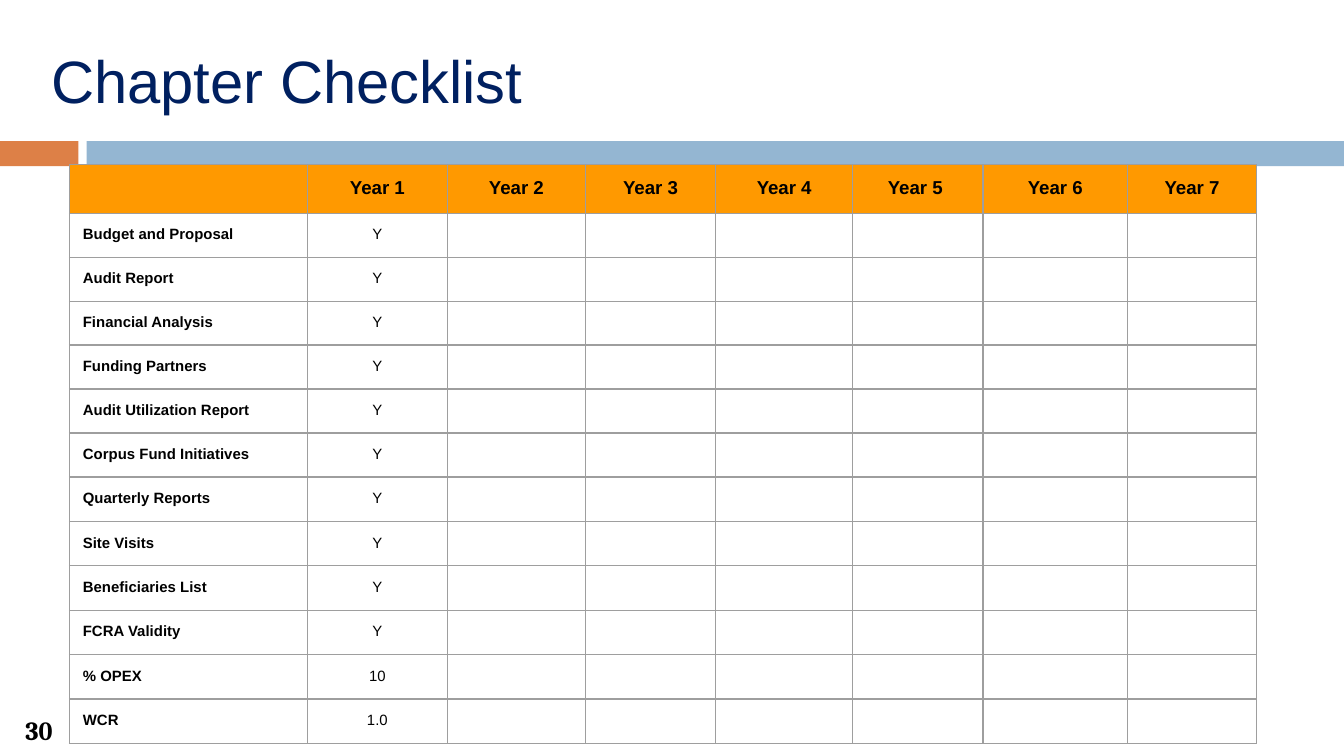
from pptx import Presentation
from pptx.dml.color import RGBColor
from pptx.enum.shapes import MSO_SHAPE as Shape
from pptx.enum.text import MSO_ANCHOR as Anchor, PP_ALIGN as Align
from pptx.oxml import parse_xml
from pptx.oxml.ns import nsdecls
from pptx.util import Pt

NAVY = RGBColor(0x00, 0x20, 0x60)
RUST = RGBColor(0xDD, 0x80, 0x47)
BLUE = RGBColor(0x94, 0xB6, 0xD2)
AMBER = RGBColor(0xFF, 0x99, 0x00)
GRAY = RGBColor(0x9E, 0x9E, 0x9E)
BLACK = RGBColor(0x00, 0x00, 0x00)

TASKS = [
    "Budget and Proposal", "Audit Report", "Financial Analysis",
    "Funding Partners", "Audit Utilization Report",
    "Corpus Fund Initiatives", "Quarterly Reports", "Site Visits",
    "Beneficiaries List", "FCRA Validity", "% OPEX", "WCR",
]
MARKS = ["Y"] * 10 + ["10", "1.0"]
HEAD = ["", "Year 1", "Year 2", "Year 3", "Year 4", "Year 5 ", "Year 6", "Year 7"]
COLS = [127.5, 75, 74, 69.75, 73.5, 69.75, 77.5, 69]
ROWS = [25.2] + [23.4] * 6 + [23.8] * 6


def style(para, size, bold=False, color=BLACK, name="Arial", align=Align.LEFT):
    para.alignment = align
    font = para.font
    font.name, font.size, font.bold = name, Pt(size), bold
    font.color.rgb = color


def add_bar(slide, left, width, color):
    bar = slide.shapes.add_shape(
        Shape.RECTANGLE, Pt(left), Pt(75.6), Pt(width), Pt(13.4))
    bar.shadow.inherit = False
    bar.fill.solid()
    bar.fill.fore_color.rgb = color
    bar.line.fill.background()


def set_title(slide, text):
    title = slide.shapes.title
    title.left, title.top = Pt(20.2), Pt(13.7)
    title.width, title.height = Pt(670.3), Pt(58.3)
    title.text = text
    title.text_frame.vertical_anchor = Anchor.MIDDLE
    style(title.text_frame.paragraphs[0], 32, color=NAVY)


def add_page(slide, text):
    box = slide.shapes.add_textbox(Pt(0), Pt(383.8), Pt(41.8), Pt(14.4))
    frame = box.text_frame
    frame.word_wrap = True
    frame.vertical_anchor = Anchor.MIDDLE
    frame.text = text
    style(frame.paragraphs[0], 14, True, name="Cambria", align=Align.CENTER)


def set_edges(cell):
    props = cell._tc.get_or_add_tcPr()
    for i, tag in enumerate(("lnL", "lnR", "lnT", "lnB")):
        props.insert(i, parse_xml(
            f'<a:{tag} {nsdecls("a")} w="{Pt(0.75)}"><a:solidFill>'
            f'<a:srgbClr val="{GRAY}"/></a:solidFill></a:{tag}>'))


def fill_cell(cell, text, head, first):
    cell.text = text
    cell.margin_left = cell.margin_right = Pt(7.2)
    cell.margin_top = cell.margin_bottom = Pt(7)
    style(cell.text_frame.paragraphs[0], 10 if head else 8, head or first,
          align=Align.LEFT if first else Align.CENTER)
    if head:
        cell.fill.solid()
        cell.fill.fore_color.rgb = AMBER
    else:
        cell.fill.background()
    set_edges(cell)


def add_grid(slide, data):
    table = slide.shapes.add_table(
        len(ROWS), len(COLS), Pt(37.2), Pt(88.2),
        Pt(sum(COLS)), Pt(sum(ROWS))).table
    table.horz_banding = False
    for col, width in zip(table.columns, COLS):
        col.width = Pt(width)
    for row, high in zip(table.rows, ROWS):
        row.height = Pt(high)
    for r, line in enumerate(data):
        for c, text in enumerate(line):
            fill_cell(table.cell(r, c), text, r == 0, c == 0)


def main():
    deck = Presentation()
    deck.slide_width, deck.slide_height = Pt(720), Pt(405)
    slide = deck.slides.add_slide(deck.slide_layouts[5])
    add_bar(slide, 0, 42, RUST)
    add_bar(slide, 46.5, 673.5, BLUE)
    set_title(slide, "Chapter Checklist")
    add_page(slide, "30")
    blanks = [""] * (len(HEAD) - 2)
    body = [[task, mark] + blanks for task, mark in zip(TASKS, MARKS)]
    add_grid(slide, [HEAD] + body)
    deck.save("out.pptx")


if __name__ == "__main__":
    main()
